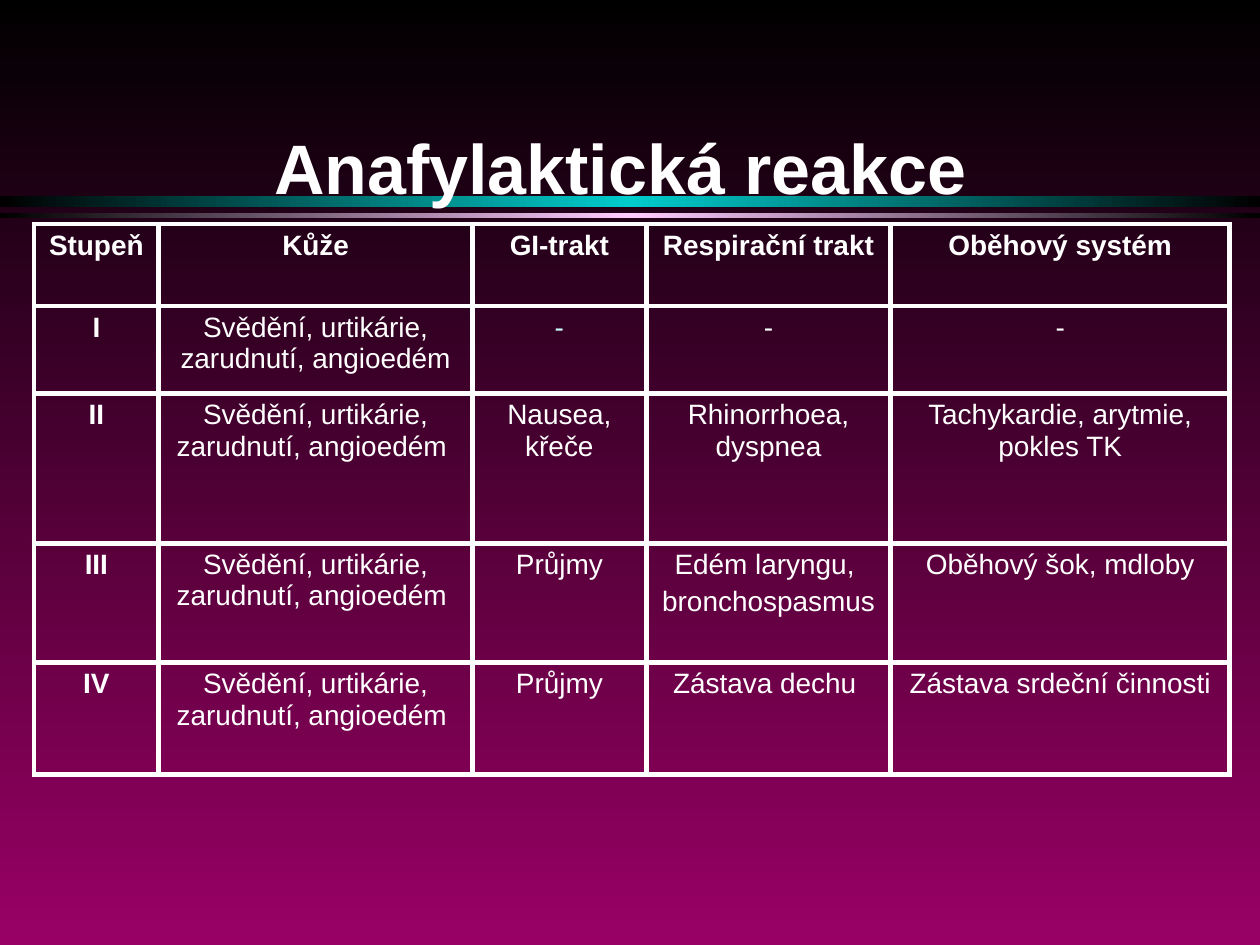
from copy import deepcopy
from pptx import Presentation
from pptx.dml.color import RGBColor
from pptx.enum.shapes import MSO_SHAPE
from pptx.enum.text import MSO_ANCHOR, PP_ALIGN
from pptx.oxml import parse_xml
from pptx.oxml.ns import nsdecls
from pptx.util import Inches, Pt

RECT = MSO_SHAPE.RECTANGLE
BOTTOM = MSO_ANCHOR.BOTTOM
CENTER = PP_ALIGN.CENTER
COLORS = {"black": "000000", "magenta": "990066", "teal": "00CCCC",
          "pink": "FFCCFF", "white": "FFFFFF", "ice": "CCFFFF"}


def set_gradient(fill, names, angle):
    """Spread the named colours evenly along a linear gradient."""
    fill.gradient()
    fill.gradient_angle = angle
    gs_list = fill.gradient_stops[0]._gs.getparent()
    while len(gs_list) < len(names):
        gs_list.append(deepcopy(gs_list[0]))
    for i, (stop, name) in enumerate(zip(fill.gradient_stops, names)):
        stop.position = i / (len(names) - 1)
        stop.color.rgb = RGBColor.from_string(COLORS[name])


def write(tf, text, size, bold, color="white"):
    """Write centred text, one paragraph per line."""
    for i, line in enumerate(text.split("\n")):
        p = tf.add_paragraph() if i else tf.paragraphs[0]
        p.alignment = CENTER
        if i:
            p.space_before = Pt(0.2 * size)
        r = p.add_run()
        r.text = line
        for key, value in {"name": "Arial", "size": Pt(size), "bold": bold}.items():
            setattr(r.font, key, value)
        r.font.color.rgb = RGBColor.from_string(COLORS[color])


prs = Presentation()
prs.slide_width, prs.slide_height = W, H = Inches(10), Inches(7.5)
s = prs.slides.add_slide(prs.slide_layouts[6])

# Background
set_gradient(s.background.fill, ["black", "magenta"], 270)

# Glowing bands under the title: top and height as shares of the slide
for top, height, glow in [(0.208, 0.0107, "teal"), (0.2253, 0.0053, "pink")]:
    sp = s.shapes.add_shape(RECT, 0, int(H * top), W, int(H * height))
    sp.shadow.inherit = False
    sp.line.fill.background()
    set_gradient(sp.fill, ["black", glow, "black"], 0)

# Title
tf = s.shapes.add_textbox(0, int(H * 0.124), W, int(H * 0.103)).text_frame
tf.word_wrap = True
tf.vertical_anchor = BOTTOM
write(tf, "Anafylaktická reakce ", 40, True)

# Table: columns and rows as percentages of the slide
SKIN = "Svědění, urtikárie, zarudnutí, angioedém"
ROWS = [
    ["Stupeň", "Kůže", "GI-trakt", "Respirační trakt", "Oběhový systém"],
    ["I", SKIN, "-", "-", "-"],
    ["II", SKIN + " ", "Nausea, křeče", "Rhinorrhoea, dyspnea",
     "Tachykardie, arytmie, pokles TK"],
    ["III", SKIN + " ", "Průjmy", "Edém laryngu, \nbronchospasmus",
     "Oběhový šok, mdloby"],
    ["IV", SKIN + " ", "Průjmy", "Zástava dechu ", "Zástava srdeční činnosti"],
]
col_shares = [9.9, 24.9, 13.8, 19.4, 26.9]
row_shares = [8.67, 9.27, 15.87, 12.6, 11.87]
table = s.shapes.add_table(
    len(ROWS), len(col_shares), int(W * 0.027), int(H * 0.237),
    int(W * sum(col_shares) / 100), int(H * sum(row_shares) / 100)).table
for col, share in zip(table.columns, col_shares):
    col.width = int(W * share / 100)
for row, share in zip(table.rows, row_shares):
    row.height = int(H * share / 100)

for i, texts in enumerate(ROWS):
    for j, text in enumerate(texts):
        cell = table.cell(i, j)
        color = "ice" if (i, j) == (1, 2) else "white"
        write(cell.text_frame, text, 16, i == 0 or j == 0, color)
        cell.fill.background()
        # Borders come before the fill in the cell properties
        tcPr = cell._tc.get_or_add_tcPr()
        for k, side in enumerate(["lnL", "lnR", "lnT", "lnB"]):
            tcPr.insert(k, parse_xml(
                f'<a:{side} {nsdecls("a")} w="{Pt(3)}"><a:solidFill>'
                f'<a:srgbClr val="{COLORS["white"]}"/></a:solidFill></a:{side}>'))

prs.save("out.pptx")
